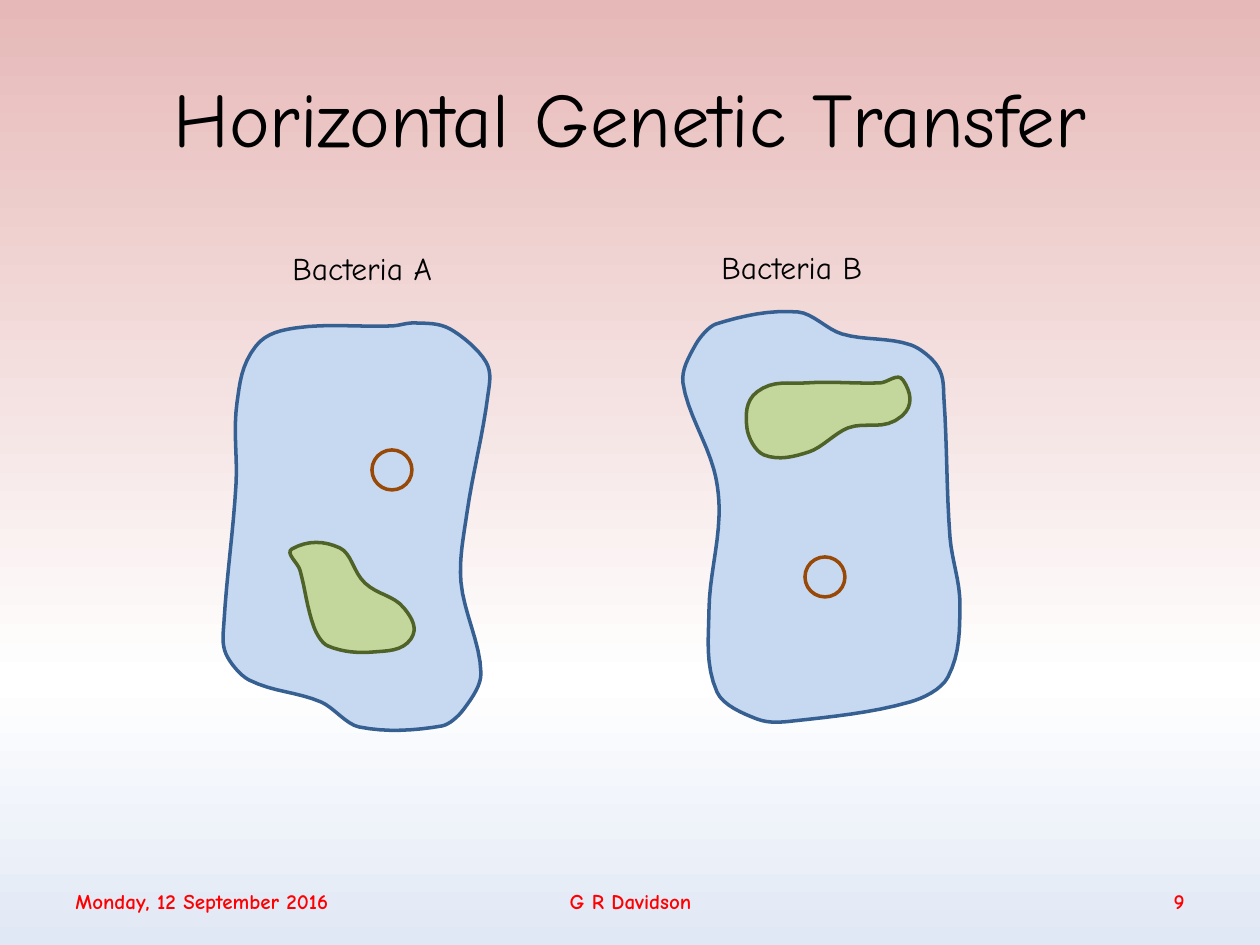
from copy import deepcopy

from pptx import Presentation
from pptx import util as u
from pptx.dml.color import RGBColor
from pptx.enum import shapes, text
from pptx.oxml.ns import qn

PX = 914400 / 126
FONT = "Comic Neue"
STEPS = 8  # straight pieces per stretch of a smoothed outline

BACKGROUND = [(0, "E6B9B8"), (72, "FFFFFF"), (100, "E1E8F5")]
CELL_COLOURS = ("C6D9F1", "376092")
GENOME_COLOURS = ("C3D69B", "4F6228")
PLASMID_LINE = "984807"
PLASMID_SIZE = 40

LEFT, CENTRE, RIGHT = (text.PP_ALIGN.LEFT, text.PP_ALIGN.CENTER, text.PP_ALIGN.RIGHT)

TITLE = ("Horizontal Genetic Transfer", (63, 38, 1134, 157), CENTRE)
FOOTERS = [
    ("Monday, 12 September 2016", (63, 876, 418, 50), LEFT),
    ("G R Davidson", (431, 876, 399, 50), CENTRE),
    ("9", (903, 876, 294, 50), RIGHT),
]

BACTERIA = [
    {
        "label": ("Bacteria A", (280, 243, 184, 50)),
        "plasmid": (372, 450),
        "cell": [
            (392, 326), (296, 328), (256, 346), (237, 403), (236, 485), (224, 622),
            (226, 654), (249, 680), (321, 702), (359, 727), (442, 726), (464, 709),
            (481, 673), (461, 582), (467, 513), (488, 395), (486, 362), (450, 329),
            (415, 323),
        ],
        "genome": [
            (292, 549), (340, 548), (365, 583), (404, 608), (411, 639), (374, 652),
            (328, 646), (314, 627), (300, 570),
        ],
    },
    {
        "label": ("Bacteria B", (709, 242, 180, 50)),
        "plasmid": (805, 557),
        "cell": [
            (793, 721), (910, 702), (948, 677), (960, 605), (950, 537), (944, 399),
            (938, 367), (911, 345), (842, 334), (798, 312), (716, 324), (696, 344),
            (683, 383), (714, 470), (719, 517), (709, 610), (717, 692), (757, 719),
        ],
        "genome": [
            (903, 380), (902, 416), (848, 428), (809, 452), (764, 455), (747, 428),
            (757, 392), (806, 383), (880, 383),
        ],
    },
]


def px(*lengths):
    return [round(length * PX) for length in lengths]


def colour(value):
    return RGBColor.from_string(value)


def paint_background(page):
    fill = page.background.fill
    fill.gradient()
    fill.gradient_angle = 270
    first = next(page.element.iter(qn("a:gs")))
    first.addnext(deepcopy(first))
    for stop, (percent, value) in zip(fill.gradient_stops, BACKGROUND):
        stop.position = percent / 100
        stop.color.rgb = colour(value)


def add_text(parent, words, frame, size, ink="000000", align=LEFT, bold=False,
             anchor=text.MSO_ANCHOR.MIDDLE, wrap=True):
    box = parent.add_textbox(*px(*frame))
    body = box.text_frame
    body.word_wrap = wrap
    body.vertical_anchor = anchor
    body.text = words
    para = body.paragraphs[0]
    para.alignment = align
    font = para.runs[0].font
    font.name, font.size, font.bold = FONT, u.Pt(size), bold
    font.color.rgb = colour(ink)
    return box


def heading(before, after, span):
    """Tangent along the line between two neighbours, as long as the span."""
    across, down = after[0] - before[0], after[1] - before[1]
    reach = max(abs(across), abs(down))
    return across * span / reach, down * span / reach


def smooth(points):
    """Trace a closed curve through the points with cubic splines."""
    count = len(points)
    curve = []
    for i in range(count):
        before, start, end, after = (points[(i + k) % count] for k in (-1, 0, 1, 2))
        span = max(abs(end[0] - start[0]), abs(end[1] - start[1]))
        leave, arrive = heading(before, end, span), heading(start, after, span)
        for step in range(STEPS):
            t = step / STEPS
            ease = t * t * (3 - 2 * t)
            curve.append(px(*(
                a + (b - a) * ease + t * (1 - t) * ((1 - t) * out - t * into)
                for a, b, out, into in zip(start, end, leave, arrive))))
    return curve


def style(shape, line, fill=None):
    shape.shadow.inherit = False
    shape.line.color.rgb = colour(line)
    shape.line.width = u.Pt(2)
    if fill:
        shape.fill.solid()
        shape.fill.fore_color.rgb = colour(fill)
    else:
        shape.fill.background()


def add_outline(parent, points, colours):
    start, *rest = smooth(points)
    builder = parent.build_freeform(*start)
    builder.add_line_segments(rest, close=True)
    fill, line = colours
    style(builder.convert_to_shape(), line, fill)


def add_bacterium(page, bacterium):
    parts = page.shapes.add_group_shape().shapes
    add_outline(parts, bacterium["cell"], CELL_COLOURS)
    plasmid = parts.add_shape(shapes.MSO_SHAPE.OVAL,
                              *px(*bacterium["plasmid"], PLASMID_SIZE, PLASMID_SIZE))
    style(plasmid, PLASMID_LINE)
    add_outline(parts, bacterium["genome"], GENOME_COLOURS)
    words, frame = bacterium["label"]
    label = add_text(parts, words, frame, 18, anchor=text.MSO_ANCHOR.TOP, wrap=False)
    label.text_frame.auto_size = text.MSO_AUTO_SIZE.SHAPE_TO_FIT_TEXT


def main():
    deck = Presentation()
    deck.slide_width, deck.slide_height = px(1260, 945)
    page = deck.slides.add_slide(deck.slide_layouts[6])
    paint_background(page)
    words, frame, align = TITLE
    add_text(page.shapes, words, frame, 44, align=align)
    for words, frame, align in FOOTERS:
        add_text(page.shapes, words, frame, 12, "FF0000", align, bold=True)
    for bacterium in BACTERIA:
        add_bacterium(page, bacterium)
    deck.save("out.pptx")


if __name__ == "__main__":
    main()
